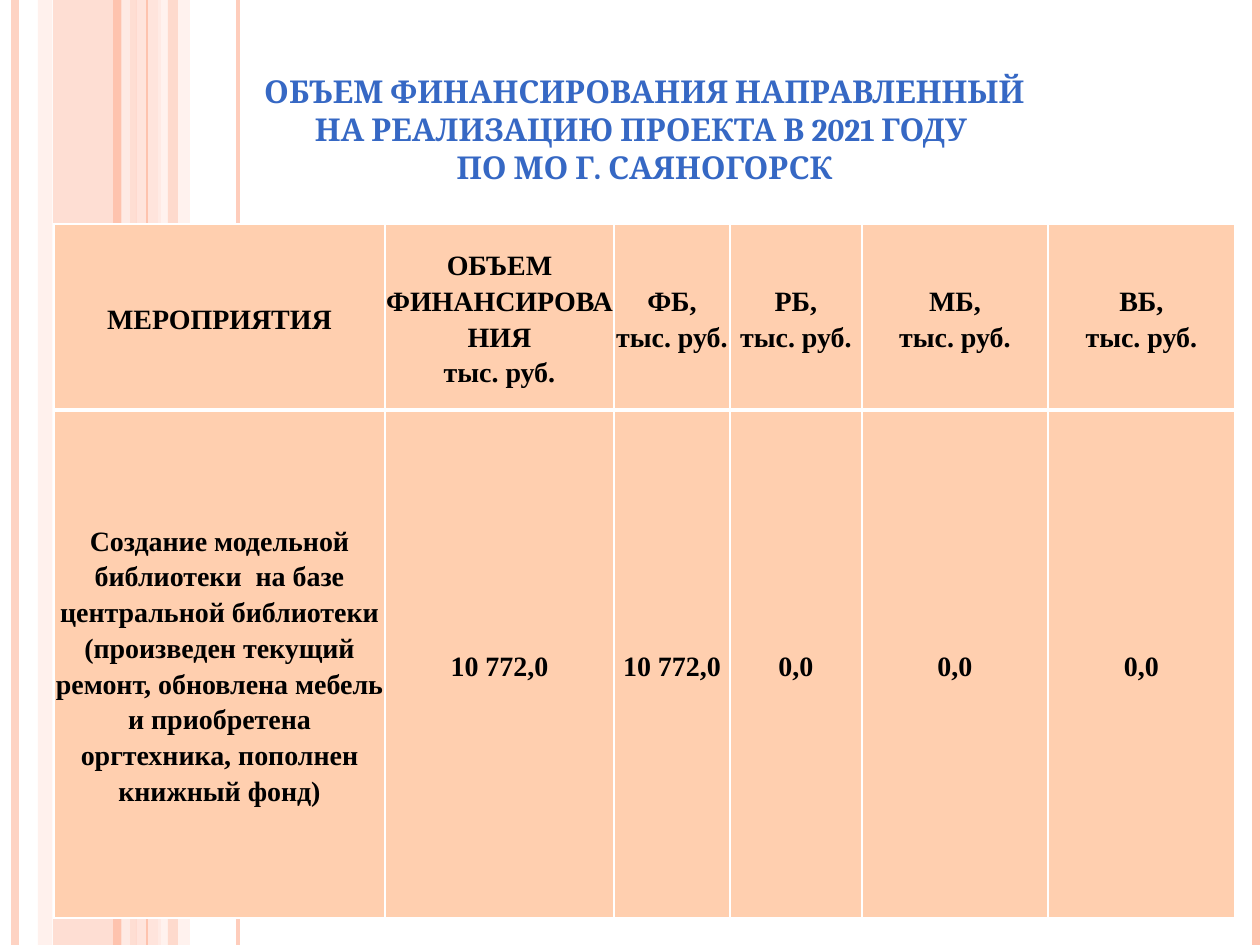
import pptx
import pptx.util
import pptx.dml.color
import pptx.enum.shapes
import pptx.enum.text
import pptx.oxml.ns
from lxml import etree

PX = 914400 // 126
WIDTH, HEIGHT = 1260, 945
COLORS = {
    "peach": "FEC3AE",
    "blush": "FFD9CE",
    "pale": "FFEDE8",
    "title": "3668C4",
    "cell": "FFCFAF",
    "border": "FFFFFF",
    "text": "000000",
}
qn = pptx.oxml.ns.qn


def color(name):
    return pptx.dml.color.RGBColor.from_string(COLORS[name])


def set_opacity(shape, percent):
    """Make every colour already set on the shape partly transparent."""
    if percent < 100:
        for tag in shape._element.spPr.iter(qn("a:srgbClr")):
            etree.SubElement(tag, qn("a:alpha"), val=str(percent * 1000))


deck = pptx.Presentation()
deck.slide_width = pptx.util.Inches(10)
deck.slide_height = pptx.util.Inches(7.5)
page = deck.slides.add_slide(deck.slide_layouts[6])

# Vertical bands: left, width, colour, opacity
bands = [
    (53, 84, "peach", 54),
    (38, 14, "blush", 36),
    (136, 25, "blush", 70),
    (158, 32, "pale", 71),
    (168, 10, "peach", 51),
]
for left, width, name, opacity in bands:
    band = page.shapes.add_shape(
        pptx.enum.shapes.MSO_SHAPE.RECTANGLE, left * PX, 0, width * PX, HEIGHT * PX)
    band.shadow.inherit = False
    band.fill.solid()
    band.fill.fore_color.rgb = color(name)
    band.line.fill.background()
    set_opacity(band, opacity)

# Vertical stripes: x, weight in points, colour, opacity
stripes = [
    (15, 4.5, "peach", 73),
    (126, 4.5, "pale", 83),
    (117, 4.5, "peach", 100),
    (238, 2.25, "peach", 82),
    (147, 0.75, "peach", 100),
    (1256, 4.5, "peach", 100),
]
for x, weight, name, opacity in stripes:
    stripe = page.shapes.add_connector(
        pptx.enum.shapes.MSO_CONNECTOR.STRAIGHT, x * PX, 0, x * PX, HEIGHT * PX)
    stripe.line.width = pptx.util.Pt(weight)
    stripe.line.color.rgb = color(name)
    set_opacity(stripe, opacity)
    etree.SubElement(stripe._element.spPr, qn("a:effectLst"))

# Title
title_lines = [
    "ОБЪЕМ ФИНАНСИРОВАНИЯ НАПРАВЛЕННЫЙ",
    "НА РЕАЛИЗАЦИЮ ПРОЕКТА В 2021 ГОДУ ",
    "ПО МО Г. САЯНОГОРСК",
]
title = page.shapes.add_textbox(54 * PX, 66 * PX, 1181 * PX, 127 * PX)
title.text_frame.word_wrap = True
for index, line in enumerate(title_lines):
    para = title.text_frame.paragraphs[0] if index == 0 else title.text_frame.add_paragraph()
    para.alignment = pptx.enum.text.PP_ALIGN.CENTER
    span = para.add_run()
    span.text = line
    span.font.name = "Cambria"
    span.font.size = pptx.util.Pt(18)
    span.font.bold = True
    span.font.color.rgb = color("title")

# Funding table: each cell is a list of paragraphs
unit = "тыс. руб."
activity = ("Создание модельной библиотеки  на базе центральной библиотеки "
            "(произведен текущий ремонт, обновлена мебель и приобретена "
            "оргтехника, пополнен книжный фонд)")
rows = [
    [["МЕРОПРИЯТИЯ"], ["ОБЪЕМ", "ФИНАНСИРОВАНИЯ", unit]]
    + [[budget, unit] for budget in ("ФБ,", "РБ,", "МБ,", "ВБ,")],
    [[activity]] + [[amount] for amount in ("10 772,0", "10 772,0", "0,0", "0,0", "0,0")],
]
column_widths = [331, 229, 116, 132, 186, 187]
row_heights = [186, 508]
# Border weights in points; the rule under the header is thicker
row_borders = [
    {"lnL": 1, "lnR": 1, "lnT": 1, "lnB": 3},
    {"lnL": 1, "lnR": 1, "lnT": 3, "lnB": 1},
]

table = page.shapes.add_table(
    len(rows), len(column_widths), 54 * PX, 224 * PX,
    sum(column_widths) * PX, sum(row_heights) * PX).table
table.horz_banding = False
for column, width in zip(table.columns, column_widths):
    column.width = width * PX
for row, height in zip(table.rows, row_heights):
    row.height = height * PX

for row, contents, borders in zip(table.rows, rows, row_borders):
    for cell, lines in zip(row.cells, contents):
        cell.margin_left = cell.margin_right = cell.margin_top = PX
        cell.margin_bottom = 0
        cell.vertical_anchor = pptx.enum.text.MSO_ANCHOR.MIDDLE
        properties = cell._tc.get_or_add_tcPr()
        for side, weight in borders.items():
            edge = etree.SubElement(
                properties, qn("a:" + side), w=str(pptx.util.Pt(weight)))
            paint = etree.SubElement(edge, qn("a:solidFill"))
            etree.SubElement(paint, qn("a:srgbClr"), val=COLORS["border"])
        cell.fill.solid()
        cell.fill.fore_color.rgb = color("cell")
        for index, line in enumerate(lines):
            frame = cell.text_frame
            para = frame.paragraphs[0] if index == 0 else frame.add_paragraph()
            para.alignment = pptx.enum.text.PP_ALIGN.CENTER
            para.line_spacing = 1.15
            span = para.add_run()
            span.text = line
            span.font.name = "Times New Roman"
            span.font.size = pptx.util.Pt(16)
            span.font.bold = True
            span.font.color.rgb = color("text")

deck.save("out.pptx")
